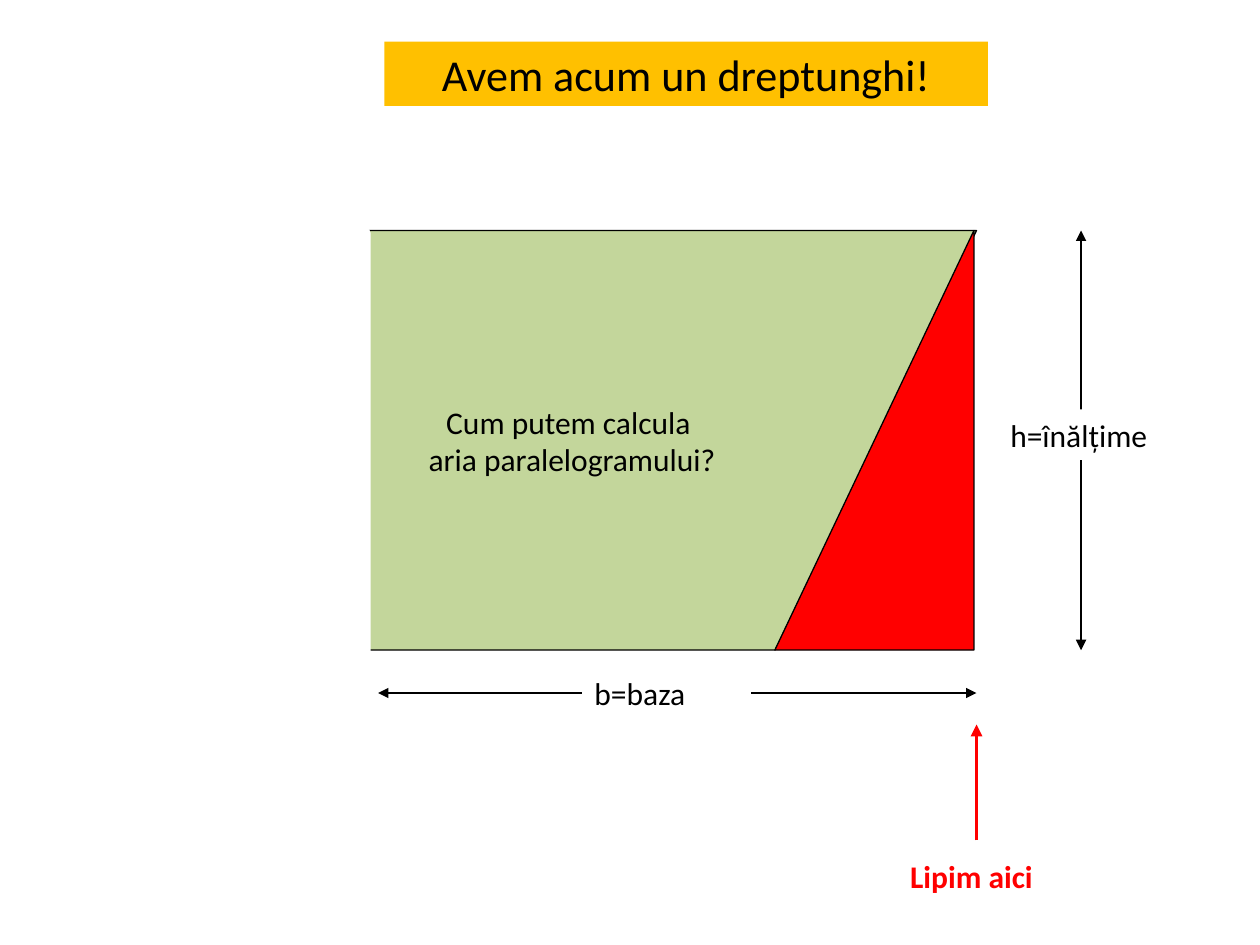
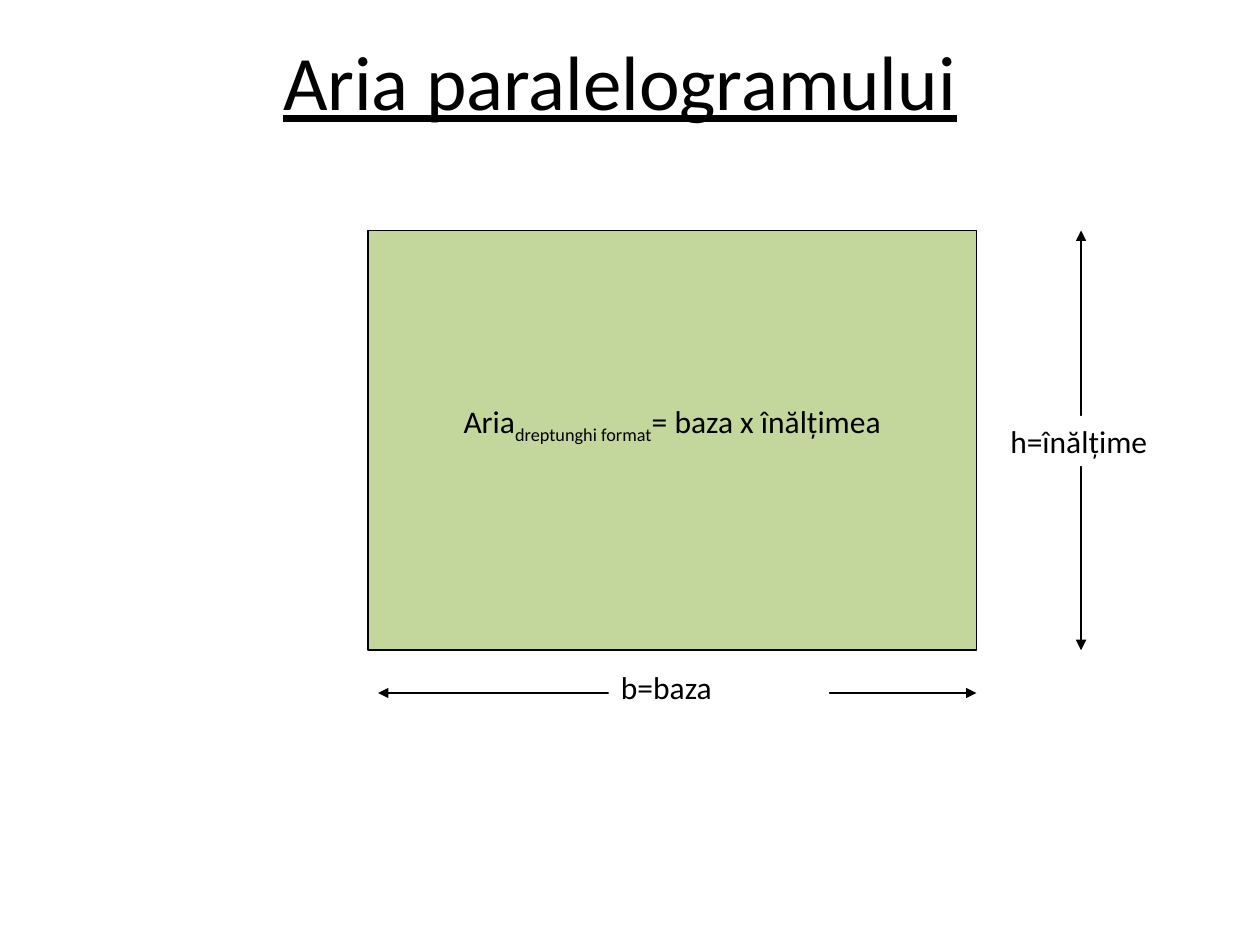
from lxml import etree
from pptx import Presentation
from pptx.dml.color import RGBColor
from pptx.enum.shapes import MSO_CONNECTOR, MSO_SHAPE
from pptx.enum.text import MSO_ANCHOR, MSO_AUTO_SIZE, PP_ALIGN
from pptx.oxml.ns import qn
from pptx.util import Pt

RECTANGLE = MSO_SHAPE.RECTANGLE
PARALLELOGRAM = MSO_SHAPE.PARALLELOGRAM
RIGHT_TRIANGLE = MSO_SHAPE.RIGHT_TRIANGLE
STRAIGHT = MSO_CONNECTOR.STRAIGHT
TOP, MIDDLE = MSO_ANCHOR.TOP, MSO_ANCHOR.MIDDLE
LEFT, CENTER = PP_ALIGN.LEFT, PP_ALIGN.CENTER
NO_AUTOFIT = MSO_AUTO_SIZE.NONE

EMU_PER_PX = 9144  # 100 px to the inch
SLIDE_SIZE = (1000, 750)
TITLE_ONLY = 5
FONT = "Calibri"
COLORS = {
    "black": "000000",
    "white": "FFFFFF",
    "green": "C3D69B",
    "red": "FF0000",
    "amber": "FFC000",
}

# Edges shared by the figures on both slides
FIGURE_TOP, FIGURE_HEIGHT, FIGURE_RIGHT = 183, 333, 775
FIGURE_BOTTOM = FIGURE_TOP + FIGURE_HEIGHT
TRIANGLE_WIDTH = 158


def px(*lengths):
    return [length * EMU_PER_PX for length in lengths]


def color(name):
    return RGBColor.from_string(COLORS[name])


class Lesson:
    """Holds the presentation, its style and the current slide."""

    def __init__(self):
        self.deck = Presentation()
        self.deck.slide_width, self.deck.slide_height = px(*SLIDE_SIZE)
        self.slide = None

    def new_slide(self):
        self.slide = self.deck.slides.add_slide(self.deck.slide_layouts[TITLE_ONLY])

    def title(self, text, box, size, fill=None, underline=False):
        heading = self.slide.shapes.title
        heading.left, heading.top, heading.width, heading.height = px(*box)
        if fill:
            heading.fill.solid()
            heading.fill.fore_color.rgb = color(fill)
        self.put_text(heading, [text], size=size, align=CENTER, anchor=MIDDLE)
        heading.text_frame.paragraphs[0].font.underline = underline

    def put_text(self, shape, lines, size=18, ink="black", bold=False,
                 align=LEFT, anchor=TOP, wrap=True):
        frame = shape.text_frame
        frame.text = "\n".join(lines)
        frame.word_wrap, frame.vertical_anchor = wrap, anchor
        frame.auto_size = NO_AUTOFIT
        for paragraph in frame.paragraphs:
            paragraph.alignment = align
            font = paragraph.font
            font.name, font.size, font.bold = FONT, Pt(size), bold
            font.color.rgb = color(ink)

    def shape(self, preset, box, fill, line=None, weight=0.75, mirrored=False):
        figure = self.slide.shapes.add_shape(preset, *px(*box))
        figure.shadow.inherit = False
        figure.fill.solid()
        figure.fill.fore_color.rgb = color(fill)
        if line:
            figure.line.color.rgb = color(line)
            figure.line.width = Pt(weight)
        else:
            figure.line.fill.background()
        if mirrored:
            figure.element.spPr.xfrm.set("flipH", "1")
        return figure

    def triangle(self, left, top, fill, line, weight=0.75):
        box = (left, top, TRIANGLE_WIDTH, FIGURE_HEIGHT)
        self.shape(RIGHT_TRIANGLE, box, fill, line, weight, mirrored=True)

    def text(self, text, box, **style):
        self.put_text(self.slide.shapes.add_textbox(*px(*box)), [text], **style)

    def arrow(self, start, end, ink="black", weight=0.75, double=True):
        arrow = self.slide.shapes.add_connector(STRAIGHT, *px(*start, *end))
        arrow.line.color.rgb = color(ink)
        arrow.line.width = Pt(weight)
        properties = arrow.element.spPr
        outline = properties.find(qn("a:ln"))
        for side in ("a:headEnd", "a:tailEnd") if double else ("a:tailEnd",):
            etree.SubElement(outline, qn(side), type="triangle")
        etree.SubElement(properties, qn("a:effectLst"))

    def dimensions(self, base_box, height_box):
        """Height and base arrows, each interrupted by its white label."""
        self.arrow((858, FIGURE_TOP), (858, FIGURE_BOTTOM))
        self.arrow((FIGURE_RIGHT, 550), (300, 550))
        for label, box in (("b=baza", base_box), ("h=înălțime", height_box)):
            self.put_text(self.shape(RECTANGLE, box, "white"), [label])


def rectangle_from_pieces(lesson):
    lesson.new_slide()
    lesson.title("Avem acum un dreptunghi!", (305, 33, 479, 51), 25.2, fill="amber")

    # Parallelogram with its left corner cut off and moved to the right
    parallelogram = lesson.shape(
        PARALLELOGRAM, (133, FIGURE_TOP, 642, FIGURE_HEIGHT), "green", "black")
    parallelogram.adjustments[0] = 0.48
    lesson.put_text(parallelogram, ["Cum putem calcula ", "aria paralelogramului?"],
                    align=CENTER, anchor=MIDDLE, wrap=False)
    lesson.triangle(132, 185, "white", "white", weight=6)
    lesson.triangle(615, FIGURE_TOP, "red", "black")

    # Where the piece is glued
    lesson.text("Lipim aici", (600, 675, 342, 40), ink="red", bold=True, align=CENTER)
    lesson.arrow((FIGURE_RIGHT, 667), (FIGURE_RIGHT, 575), "red", 2.25, double=False)

    lesson.dimensions((462, 530, 134, 40), (792, 325, 167, 40))


def parallelogram_area(lesson):
    lesson.new_slide()
    lesson.title("Aria paralelogramului", (42, 1, 900, 125), 44, underline=True)

    # Rectangle with the area formula, set a little above its middle
    rectangle = lesson.shape(
        RECTANGLE, (292, FIGURE_TOP, 483, FIGURE_HEIGHT), "green", "black")
    lesson.put_text(rectangle, ["Aria"], align=CENTER, anchor=MIDDLE, wrap=False)
    rectangle.text_frame.margin_bottom = 32 * EMU_PER_PX
    formula = rectangle.text_frame.paragraphs[0]
    for part in ("dreptunghi format", "= baza x înălțimea"):
        formula.add_run().text = part
    subscript = list(rectangle.element.iter(qn("a:r")))[1]
    subscript.get_or_add_rPr().set("baseline", "-25000")

    lesson.dimensions((483, 525, 175, 40), (792, 330, 167, 40))


def main():
    lesson = Lesson()
    rectangle_from_pieces(lesson)
    parallelogram_area(lesson)
    lesson.deck.save("out.pptx")


if __name__ == "__main__":
    main()
